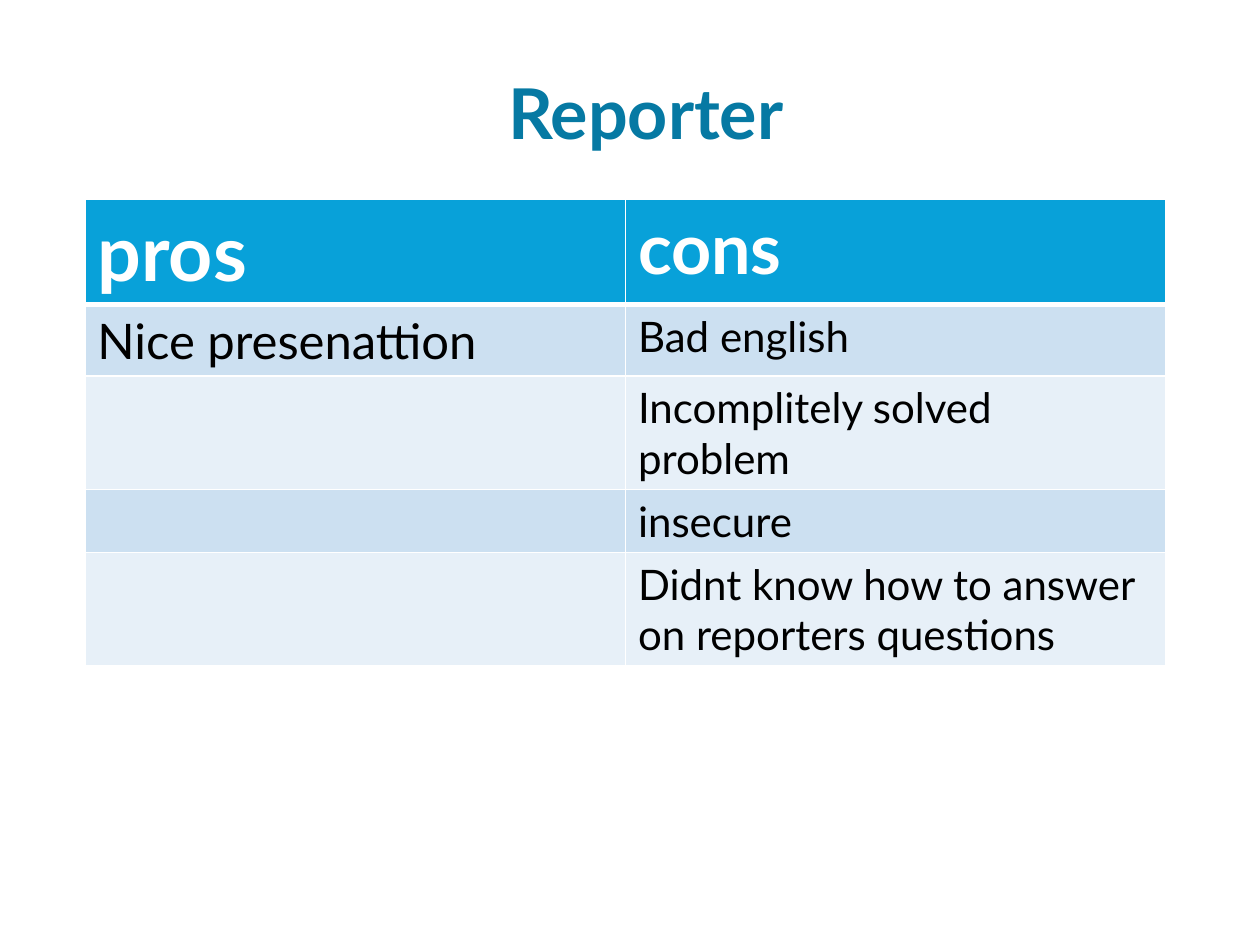
from lxml.etree import SubElement
from pptx import Presentation
from pptx.dml.color import RGBColor
from pptx.enum.text import MSO_ANCHOR, MSO_AUTO_SIZE, PP_ALIGN
from pptx.oxml.ns import qn
from pptx.util import Pt

# Content: each cell is its text and size
TITLE = "Reporter"
ROWS = [
    [("pros", 44), ("cons", 40)],
    [("Nice presenattion", 28), ("Bad english", 24)],
    [("", 18), ("Incomplitely solved problem", 24)],
    [("", 18), ("insecure", 24)],
    [("", 18), ("Didnt know how to answer on reporters questions", 24)],
]

FONT = "Lato"
TEAL = RGBColor(0x06, 0x79, 0xA3)
BLUE = RGBColor(0x08, 0xA1, 0xD9)
BANDS = [RGBColor(0xE7, 0xF0, 0xF8), RGBColor(0xCC, 0xE0, 0xF1)]
WHITE = RGBColor(0xFF, 0xFF, 0xFF)
BLACK = RGBColor(0, 0, 0)


def style(para, size, color, bold):
    for run in para.runs:
        font = run.font
        font.name, font.size, font.bold = FONT, Pt(size), bold
        font.color.rgb = color


def edge(cell, widths):
    props = cell._tc.get_or_add_tcPr()
    for at, (side, width) in enumerate(widths.items()):
        line = SubElement(props, qn(f"a:ln{side}"), w=str(Pt(width)))
        fill = SubElement(line, qn("a:solidFill"))
        SubElement(fill, qn("a:srgbClr"), val=str(WHITE))
        props.insert(at, line)  # borders come before the fill


def main():
    deck = Presentation()
    deck.slide_width, deck.slide_height = Pt(720), Pt(540)
    slide = deck.slides.add_slide(deck.slide_layouts[5])

    # Title
    title = slide.shapes.title
    title.left, title.top = Pt(102), Pt(36)
    title.width, title.height = Pt(534), Pt(55.4)
    frame = title.text_frame
    frame.text = TITLE
    frame.word_wrap = True
    frame.auto_size = MSO_AUTO_SIZE.SHAPE_TO_FIT_TEXT
    frame.vertical_anchor = MSO_ANCHOR.TOP
    frame.paragraphs[0].alignment = PP_ALIGN.CENTER
    style(frame.paragraphs[0], 40, TEAL, True)

    # Table: rows grow with their text
    holder = slide.shapes.add_table(
        len(ROWS), 2, Pt(48.5), Pt(114), Pt(617.8), Pt(237.6))
    table = holder.table
    for row in table.rows:
        row.height = Pt(35.3)
    holder.height = Pt(237.6)

    # Cells
    for r, row in enumerate(ROWS):
        head = r == 0
        for c, (text, size) in enumerate(row):
            cell = table.cell(r, c)
            cell.fill.solid()
            cell.fill.fore_color.rgb = BLUE if head else BANDS[r % 2]
            cell.text_frame.text = text
            style(cell.text_frame.paragraphs[0], size,
                  WHITE if head else BLACK, head)
            edge(cell, {"L": 1, "R": 1, "T": 3 if r == 1 else 1,
                        "B": 3 if head else 1})

    deck.save("out.pptx")


if __name__ == "__main__":
    main()
